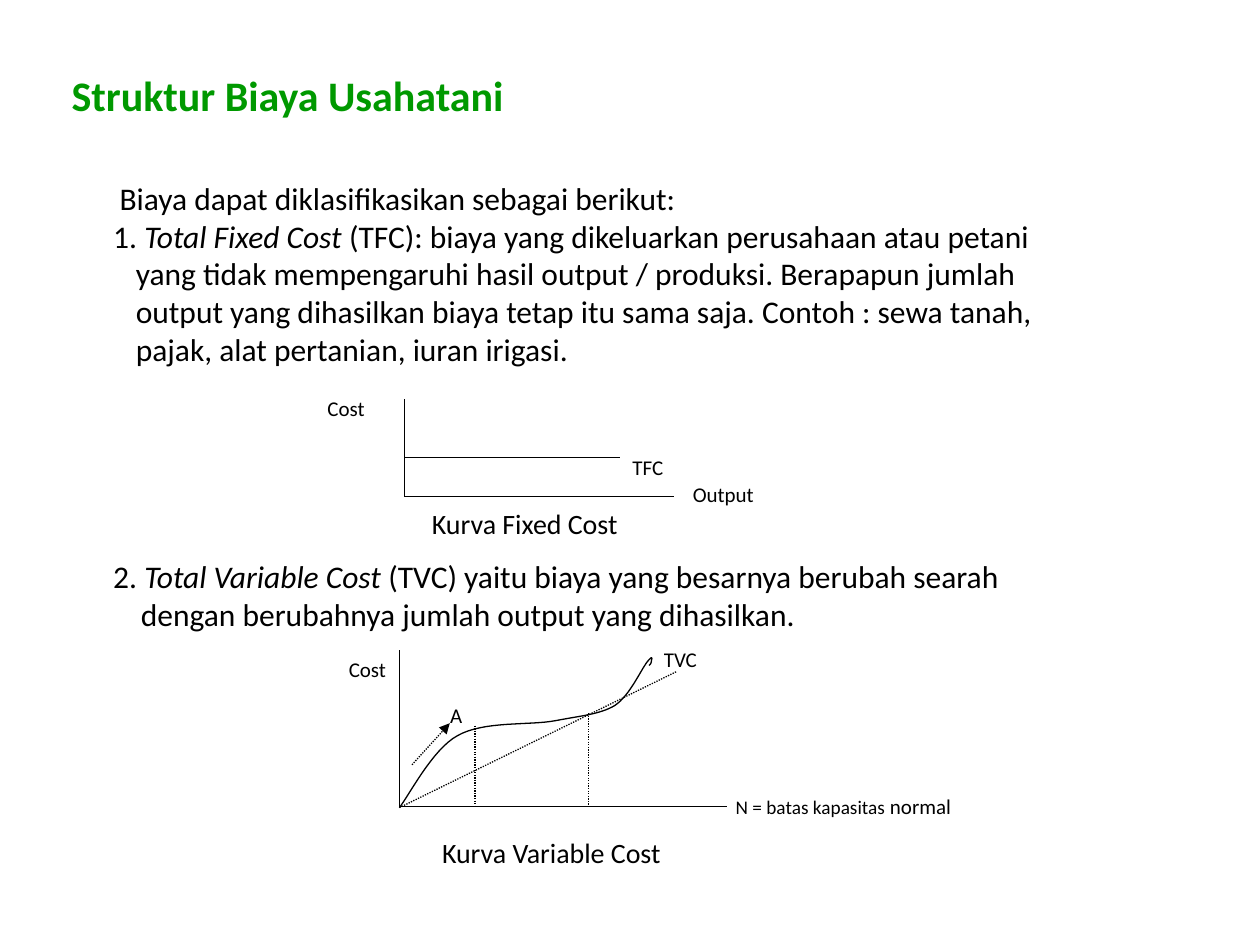
from dataclasses import dataclass

from pptx import Presentation
from pptx.dml.color import RGBColor
from pptx.enum import dml, shapes, text
from pptx.oxml.ns import qn
from pptx.util import Inches, Pt
from lxml import etree


@dataclass(frozen=True)
class Theme:
    font: str = "Calibri"
    ink: RGBColor = RGBColor(0, 0, 0)
    green: RGBColor = RGBColor(0x00, 0x99, 0x00)
    title: float = 24
    body: float = 18
    caption: float = 16
    label: float = 12
    small: float = 11
    line: float = 0.75


THEME = Theme()


@dataclass(frozen=True)
class Run:
    text: str
    size: float = THEME.body
    color: RGBColor = THEME.ink
    bold: bool = False
    italic: bool = False


@dataclass(frozen=True)
class Para:
    runs: tuple[Run, ...]
    margin: float = 0
    indent: float = 0


@dataclass(frozen=True)
class Box:
    left: float
    top: float
    width: float
    height: float
    paras: tuple[Para, ...]
    centered: bool = False


@dataclass(frozen=True)
class Line:
    start: tuple[float, float]
    end: tuple[float, float]
    dotted: bool = False
    arrow: bool = False


def label(words: str, left: float, top: float, width: float, height: float,
          size: float = THEME.label, centered: bool = False) -> Box:
    return Box(left, top, width, height, (Para((Run(words, size),)),), centered)


def add_box(slide, box: Box) -> None:
    s = slide.shapes.add_textbox(*map(Inches, (box.left, box.top, box.width, box.height)))
    tf = s.text_frame
    tf.word_wrap = True
    for i, para in enumerate(box.paras):
        p = tf.paragraphs[0] if i == 0 else tf.add_paragraph()
        p.alignment = text.PP_ALIGN.CENTER if box.centered else text.PP_ALIGN.LEFT
        pPr = p._p.get_or_add_pPr()
        pPr.set("marL", str(Inches(para.margin)))
        pPr.set("indent", str(Inches(para.indent)))
        for run in para.runs:
            r = p.add_run()
            r.text = run.text
            r.font.name = THEME.font
            r.font.size = Pt(run.size)
            r.font.bold = run.bold
            r.font.italic = run.italic
            r.font.color.rgb = run.color


def add_line(slide, line: Line) -> None:
    c = slide.shapes.add_connector(
        shapes.MSO_CONNECTOR.STRAIGHT, *map(Inches, line.start + line.end))
    c.line.color.rgb = THEME.ink
    c.line.width = Pt(THEME.line)
    if line.dotted:
        c.line.dash_style = dml.MSO_LINE.ROUND_DOT
    if line.arrow:
        etree.SubElement(c.line._get_or_add_ln(), qn("a:tailEnd"), type="triangle")
    etree.SubElement(c._element.spPr, qn("a:effectLst"))


def bezier(points: list[tuple[float, float]], steps: int = 16) -> list[tuple[float, float]]:
    """Sample a chain of cubic segments that share their end points."""
    result = [points[0]]
    for i in range(0, len(points) - 1, 3):
        for t in (n / steps for n in range(1, steps + 1)):
            weights = ((1 - t) ** 3, 3 * t * (1 - t) ** 2, 3 * t * t * (1 - t), t ** 3)
            segment = points[i:i + 4]
            result.append(tuple(sum(w * q[axis] for w, q in zip(weights, segment))
                                for axis in (0, 1)))
    return result


def add_curve(slide, points: list[tuple[float, float]]) -> None:
    first, *rest = [(Inches(x), Inches(y)) for x, y in bezier(points)]
    builder = slide.shapes.build_freeform(*first)
    builder.add_line_segments(rest, close=False)
    s = builder.convert_to_shape()
    s.shadow.inherit = False
    s.fill.background()
    s.line.color.rgb = THEME.ink
    s.line.width = Pt(THEME.line)


TITLE = Box(0.47, 0.5, 8.95, 0.5, (
    Para((Run("Struktur Biaya Usahatani", THEME.title, THEME.green, bold=True),)),))

FIXED_TEXT = Box(0.8, 1.37, 7.75, 1.62, (
    Para((Run("Biaya dapat diklasifikasikan sebagai berikut:"),), 0.05),
    Para((Run("1. "), Run("Total Fixed Cost ", italic=True),
          Run("(TFC): biaya yang dikeluarkan perusahaan atau petani yang tidak "
              "mempengaruhi hasil output / produksi. Berapapun jumlah output yang "
              "dihasilkan biaya tetap itu sama saja. Contoh : sewa tanah, pajak, "
              "alat pertanian, iuran irigasi.")), 0.18, -0.18)))

VARIABLE_TEXT = Box(0.8, 4.37, 7.75, 0.71, (
    Para((Run("2. "), Run("Total Variable Cost", italic=True),
          Run(" (TVC) yaitu biaya yang besarnya berubah searah dengan berubahnya "
              "jumlah output yang dihasilkan.")), 0.22, -0.22),))

FIXED_LABELS = [
    label("Cost", 2.5, 3.09, 0.71, 0.23),
    label("TFC", 4.92, 3.56, 0.71, 0.23),
    label("Output", 5.4, 3.77, 1, 0.23),
    label("Kurva Fixed Cost", 3.33, 3.97, 1.97, 0.37, THEME.caption),
]
VARIABLE_LABELS = [
    label("Cost", 2.67, 5.16, 0.5, 0.25),
    label("TVC", 5.17, 5.08, 0.55, 0.25),
    Box(5.74, 6.25, 2.87, 0.25, (
        Para((Run("N = batas kapasitas", THEME.small), Run(" normal", THEME.label))),)),
    label("A", 3.37, 5.53, 0.5, 0.25, centered=True),
    label("Kurva Variable Cost", 3.41, 6.58, 2.42, 0.37, THEME.caption),
]

FIXED_LINES = [
    Line((3.21, 3.17), (3.21, 3.94)),
    Line((3.21, 3.94), (5.35, 3.94)),
    Line((3.21, 3.63), (4.92, 3.63)),
]
VARIABLE_LINES = [
    Line((3.17, 5.16), (3.17, 6.4)),
    Line((3.17, 6.4), (5.77, 6.4)),
    Line((3.17, 6.41), (5.37, 5.33), dotted=True),
    Line((3.77, 5.76), (3.77, 6.41), dotted=True),
    Line((4.67, 5.66), (4.67, 6.41), dotted=True),
    Line((3.27, 6.07), (3.57, 5.74), dotted=True, arrow=True),
]
TVC_CURVE = [
    (3.17, 6.41), (3.25, 6.31), (3.43, 5.95), (3.63, 5.84),
    (3.84, 5.72), (4.2, 5.76), (4.41, 5.72),
    (4.62, 5.68), (4.76, 5.67), (4.88, 5.6),
    (5, 5.52), (5.09, 5.31), (5.14, 5.25),
    (5.19, 5.19), (5.17, 5.24), (5.17, 5.25),
    (5.17, 5.26), (5.16, 5.28), (5.15, 5.28),
]


def main() -> None:
    prs = Presentation()
    prs.slide_width, prs.slide_height = Inches(10), Inches(7.5)
    slide = prs.slides.add_slide(prs.slide_layouts[6])
    for line in FIXED_LINES + VARIABLE_LINES:
        add_line(slide, line)
    add_curve(slide, TVC_CURVE)
    for box in [TITLE, FIXED_TEXT, *FIXED_LABELS, VARIABLE_TEXT, *VARIABLE_LABELS]:
        add_box(slide, box)
    prs.save("out.pptx")


if __name__ == "__main__":
    main()
